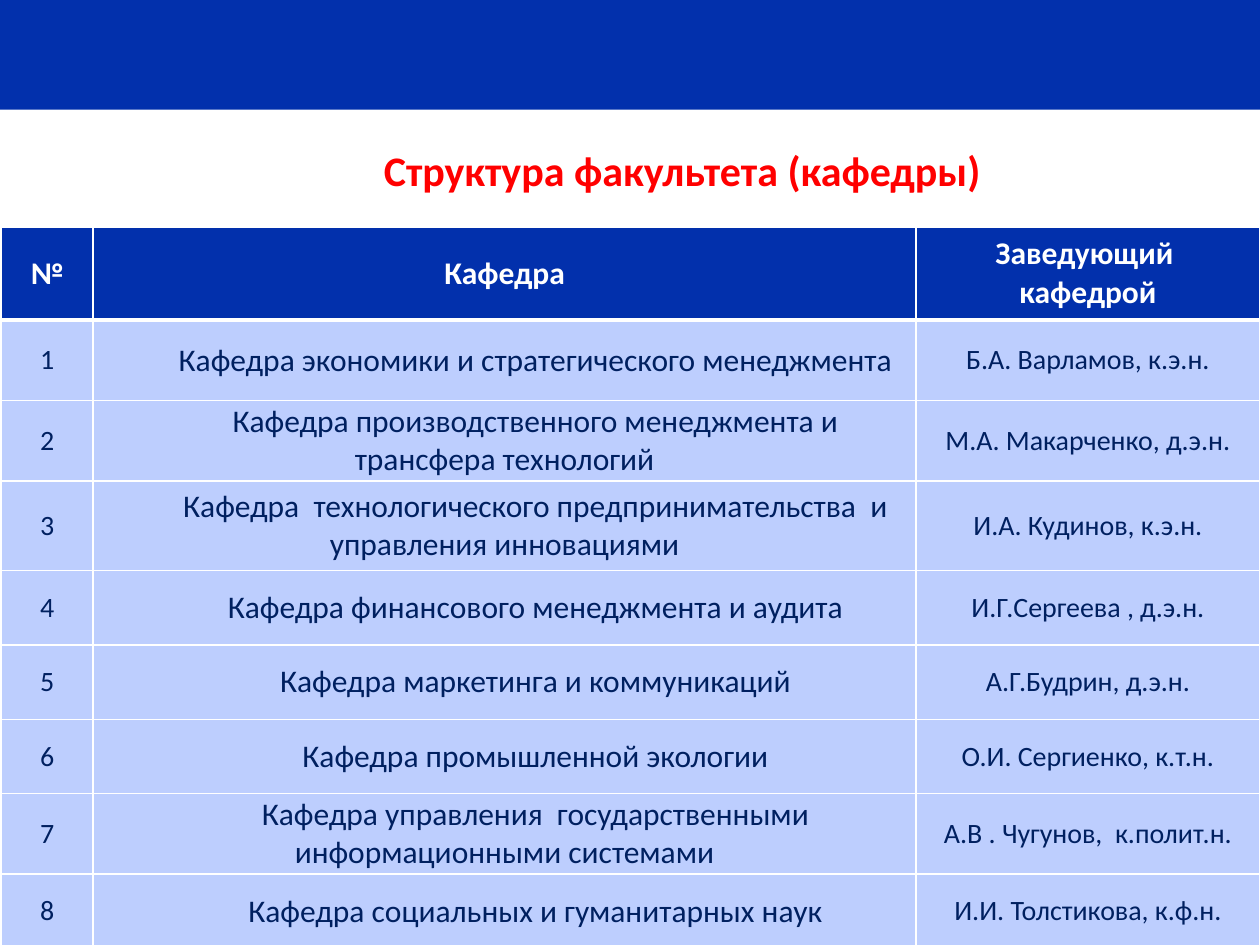
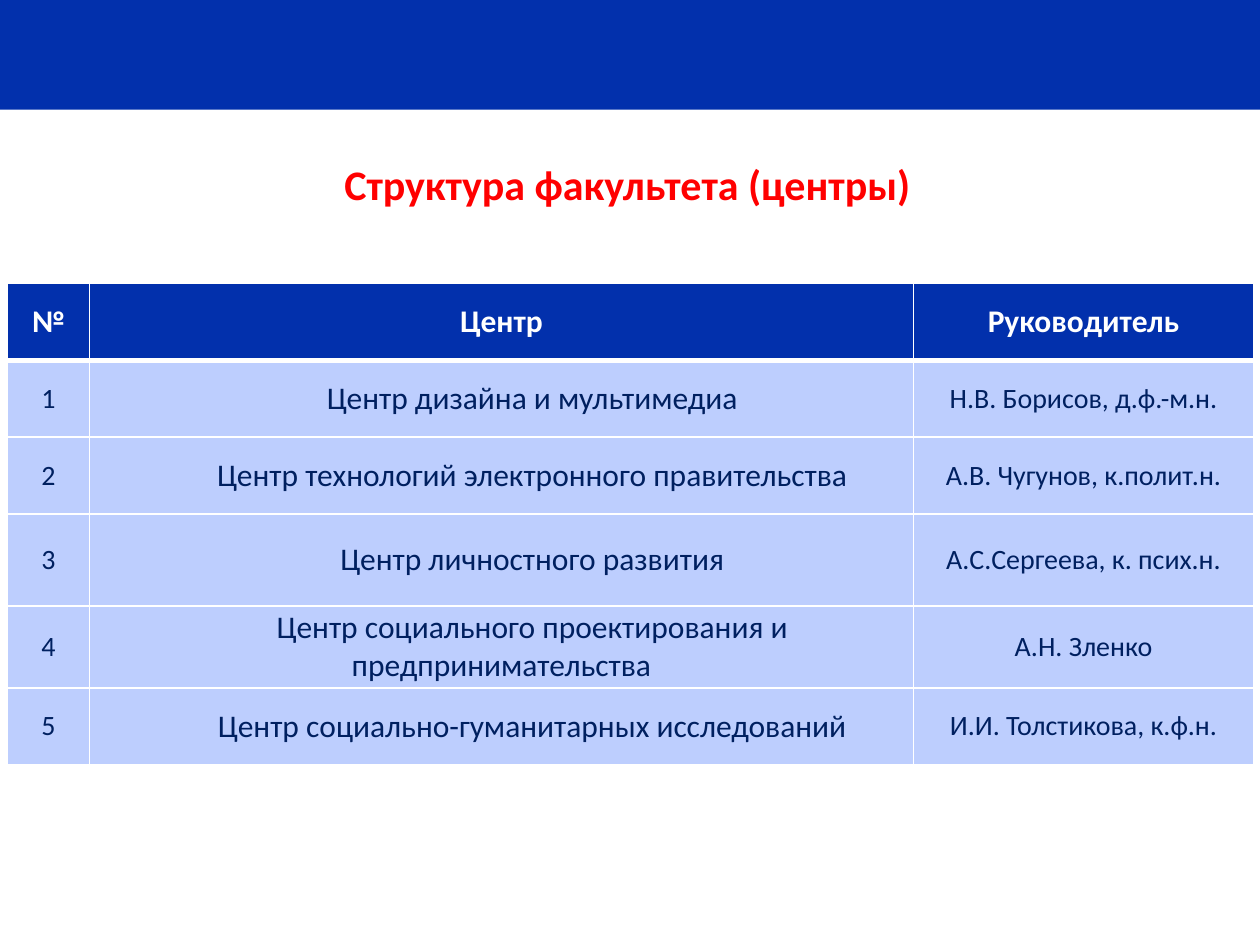
import pptx
import pptx.dml.color
import pptx.enum.shapes
import pptx.enum.text
import pptx.oxml
import pptx.oxml.ns
import pptx.util
from dataclasses import dataclass

Inches = pptx.util.Inches
Pt = pptx.util.Pt
RGB = pptx.dml.color.RGBColor.from_string
ANCHOR = pptx.enum.text.MSO_ANCHOR
ALIGN = pptx.enum.text.PP_ALIGN


@dataclass(frozen=True)
class Theme:
    font: str = "Calibri"
    blue: str = "0230AC"
    pale: str = "BDCEFE"
    navy: str = "002060"
    white: str = "FFFFFF"
    red: str = "FF0000"
    title_size: int = 24
    main_size: int = 18
    small_size: int = 16
    thin: int = 1
    thick: int = 3
    indent: float = 0.49


T = Theme()
WIDE_INSETS = (0.1, 0.05)
TIGHT_INSETS = (0.07, 0)

DEPARTMENTS = [
    ("№", "Кафедра", "Заведующий  кафедрой"),
    ("1", "Кафедра экономики и стратегического менеджмента", "Б.А. Варламов, к.э.н."),
    ("2", "Кафедра производственного менеджмента и трансфера технологий", "М.А. Макарченко, д.э.н."),
    ("3", "Кафедра  технологического предпринимательства  и управления инновациями", "И.А. Кудинов, к.э.н."),
    ("4", "Кафедра финансового менеджмента и аудита", "И.Г.Сергеева , д.э.н."),
    ("5", "Кафедра маркетинга и коммуникаций", "А.Г.Будрин, д.э.н."),
    ("6", "Кафедра промышленной экологии", "О.И. Сергиенко, к.т.н."),
    ("7", "Кафедра управления  государственными информационными системами", "А.В . Чугунов,  к.полит.н."),
    ("8", "Кафедра социальных и гуманитарных наук", "И.И. Толстикова, к.ф.н."),
]
CENTRES = [
    ("№", "Центр", "Руководитель"),
    ("1", "Центр дизайна и мультимедиа", "Н.В. Борисов, д.ф.-м.н."),
    ("2", "Центр технологий электронного правительства", "А.В. Чугунов, к.полит.н."),
    ("3", "Центр личностного развития", "А.С.Сергеева, к. псих.н."),
    ("4", "Центр социального проектирования и предпринимательства", "А.Н. Зленко"),
    ("5", "Центр социально-гуманитарных исследований", "И.И. Толстикова, к.ф.н."),
]


def set_attrs(obj, values):
    for name, value in values.items():
        setattr(obj, name, value)


def format_text(tf, text, size, color, bold):
    tf.text = text
    p = tf.paragraphs[0]
    p.alignment = ALIGN.CENTER
    font = p.runs[0].font
    set_attrs(font, {"name": T.font, "size": Pt(size), "bold": bold})
    font.color.rgb = RGB(color)
    return p


def add_band(s, box):
    sp = s.shapes.add_shape(pptx.enum.shapes.MSO_SHAPE.RECTANGLE, *map(Inches, box))
    sp.shadow.inherit = False
    sp.fill.solid()
    sp.fill.fore_color.rgb = RGB(T.blue)
    sp.line.fill.background()


def add_title(s, text, box):
    title = s.shapes.title
    set_attrs(title, dict(zip(("left", "top", "width", "height"), map(Inches, box))))
    tf = title.text_frame
    set_attrs(tf, {"word_wrap": True, "vertical_anchor": ANCHOR.MIDDLE})
    format_text(tf, text, T.title_size, T.red, True)


def set_borders(cell, widths):
    tc_pr = cell._tc.get_or_add_tcPr()
    for i, (side, width) in enumerate(widths.items()):
        ln = pptx.oxml.parse_xml(
            f'<a:{side} {pptx.oxml.ns.nsdecls("a")} w="{Pt(width)}"><a:solidFill>'
            f'<a:srgbClr val="{T.white}"/></a:solidFill></a:{side}>')
        tc_pr.insert(i, ln)


def format_cell(cell, text, row, col):
    header = row == 0
    dx, dy = WIDE_INSETS if header or col == 2 else TIGHT_INSETS
    set_attrs(cell, {
        "margin_left": Inches(dx), "margin_right": Inches(dx),
        "margin_top": Inches(dy), "margin_bottom": Inches(dy),
        "vertical_anchor": ANCHOR.MIDDLE,
    })
    cell.fill.solid()
    cell.fill.fore_color.rgb = RGB(T.blue if header else T.pale)
    size = T.main_size if header or col == 1 else T.small_size
    p = format_text(cell.text_frame, text, size, T.white if header else T.navy, header)
    if col == 1 and not header:
        p._p.get_or_add_pPr().set("indent", str(Inches(T.indent)))
    set_borders(cell, {
        "lnL": T.thin, "lnR": T.thin,
        "lnT": T.thick if row == 1 else T.thin,
        "lnB": T.thick if header else T.thin,
    })


def add_staff_table(s, rows, left, top, widths, heights):
    frame = s.shapes.add_table(len(rows), len(widths), Inches(left), Inches(top),
                               Inches(sum(widths)), Inches(sum(heights)))
    table = frame.table
    for column, width in zip(table.columns, widths):
        column.width = Inches(width)
    for r, (texts, height) in enumerate(zip(rows, heights)):
        table.rows[r].height = Inches(height)
        for c, text in enumerate(texts):
            format_cell(table.cell(r, c), text, r, c)


def add_structure_slide(prs, title, title_box, rows, **table_box):
    s = prs.slides.add_slide(prs.slide_layouts[5])
    add_band(s, (0, 0, 10, 0.87))
    add_title(s, title, title_box)
    add_staff_table(s, rows, **table_box)


def main():
    prs = pptx.Presentation()
    set_attrs(prs, {"slide_width": Inches(10), "slide_height": Inches(7.5)})
    add_structure_slide(
        prs, "Структура факультета (кафедры)", (2.88, 0.9, 5.07, 0.9), DEPARTMENTS,
        left=0.01, top=1.8, widths=(0.73, 6.53, 2.73),
        heights=(0.74, 0.64, 0.64, 0.71, 0.59, 0.59, 0.59, 0.64, 0.59))
    add_structure_slide(
        prs, "Структура факультета (центры)", (0.48, 1.06, 9, 0.79), CENTRES,
        left=0.06, top=2.25, widths=(0.65, 6.54, 2.7),
        heights=(0.61, 0.61, 0.61, 0.73, 0.65, 0.61))
    prs.save("out.pptx")


if __name__ == "__main__":
    main()
